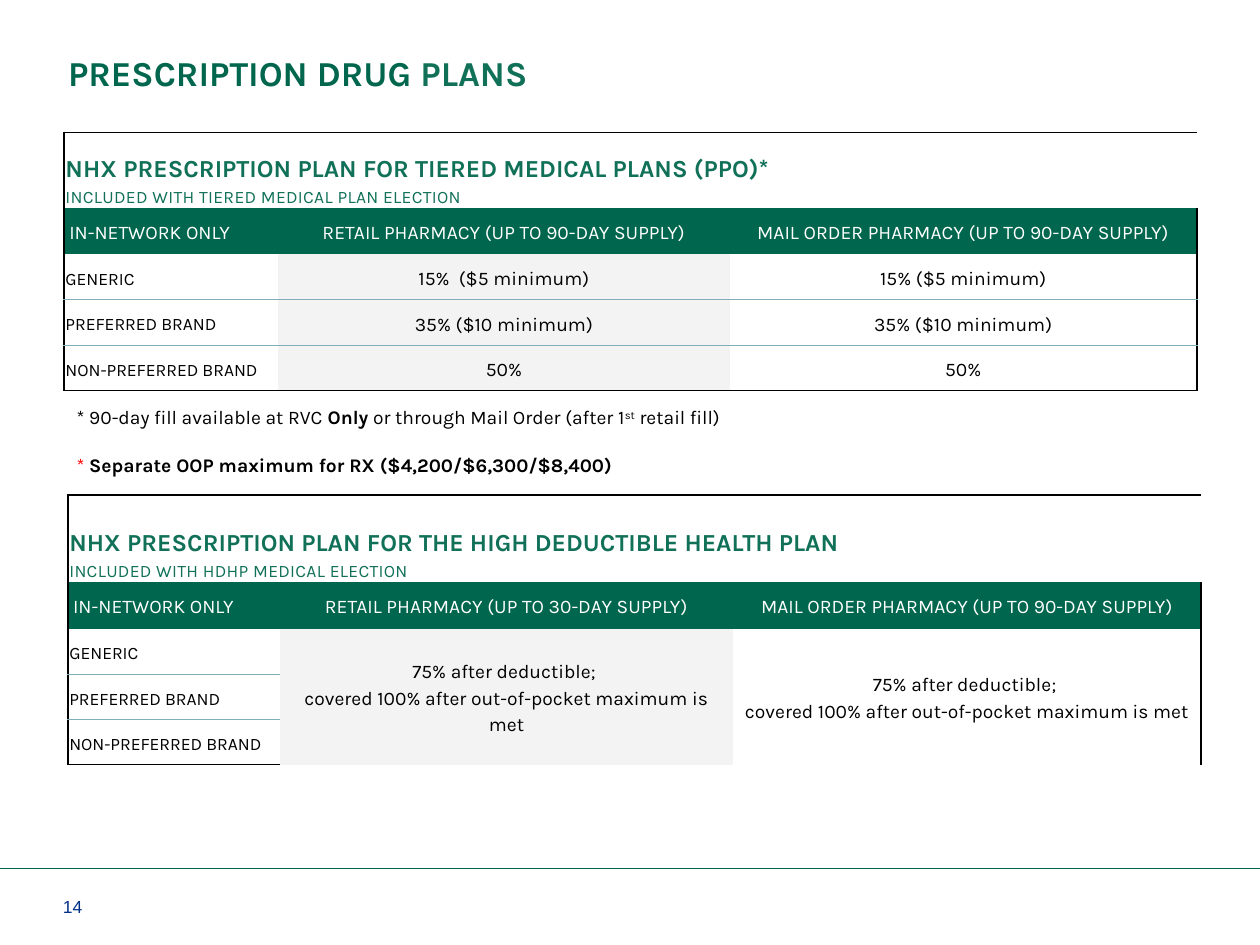
from lxml.etree import SubElement
from pptx import Presentation
from pptx.dml.color import RGBColor
from pptx.enum.shapes import MSO_CONNECTOR
from pptx.enum.text import MSO_ANCHOR as Anchor, PP_ALIGN as Align
from pptx.oxml.ns import qn
from pptx.util import Inches, Pt

# Content
TITLE = [("PRESCRIPTION DRUG ", "green"), ("PLANS", "leaf")]
TIERS = ["GENERIC", "PREFERRED BRAND", "NON-PREFERRED BRAND"]
AFTER_DEDUCTIBLE = "75% after deductible; \vcovered 100% after out-of-pocket maximum is met"
PLANS = [
    {
        "heading": "NHX PRESCRIPTION PLAN FOR TIERED MEDICAL PLANS (PPO)*",
        "included": "INCLUDED WITH TIERED MEDICAL PLAN ELECTION",
        "retail_days": 30 * 3,
        "costs": [("15%\u00a0 ($5 minimum)", "15% ($5 minimum)"),
                  ("35% ($10 minimum)", "35% ($10 minimum)"),
                  ("50%", "50%")],
        "left": 0.51, "top": 1.05, "columns": [1.7, 3.58, 3.71], "heading_height": 0.6,
    },
    {
        "heading": "NHX PRESCRIPTION PLAN FOR THE HIGH DEDUCTIBLE HEALTH PLAN",
        "included": "INCLUDED WITH HDHP MEDICAL ELECTION",
        "retail_days": 30,
        "costs": [(AFTER_DEDUCTIBLE, AFTER_DEDUCTIBLE)],  # one cost for all tiers
        "left": 0.54, "top": 3.93, "columns": [1.68, 3.6, 3.71], "heading_height": 0.69,
    },
]
# Each note is a list of (text, format)
NOTES = [
    [("* 90-day fill available at RVC ", {}), ("Only", {"bold": True}),
     (" or through Mail Order (after 1", {}), ("st", {"raised": True}),
     (" retail fill)", {})],
    [("* ", {"color": "red"}),
     ("Separate OOP maximum for RX ($4,200/$6,300/$8,400)", {"bold": True})],
]
PAGE = "14"

# Look
COLORS = {"green": "00664D", "leaf": "117158", "black": "000000", "white": "FFFFFF",
          "shade": "F3F3F3", "rule": "81AFB9", "red": "FF0000", "navy": "003087"}
HEADER_ROW, TIER_ROW = 0.37, 0.36
LABEL_INSETS = (0.01, 0.01, 0.01, 0)
VALUE_INSETS = (0.04, 0, 0.04, 0)
BOX_INSETS = (0, 0.05, 0, 0.05)
OUTLINE, RULE = ("black", 1), ("rule", 0.5)


def rgb(name):
    return RGBColor.from_string(COLORS[name])


def add_run(paragraph, text, size, color="black", bold=False, font="Karla",
            raised=False, tracking=0):
    run = paragraph.add_run()
    run.text = text
    for key, value in {"size": Pt(size), "bold": bold, "name": font}.items():
        setattr(run.font, key, value)
    run.font.color.rgb = rgb(color)
    if raised:
        run.font._element.set("baseline", "30000")
    if tracking:
        run.font._element.set("spc", str(tracking))


def add_text(paragraph, text, size, align=Align.LEFT, **style):
    paragraph.alignment = align
    paragraph.line_spacing = 1.19
    first, *rest = text.split("\v")
    add_run(paragraph, first, size, **style)
    for line in rest:
        paragraph.add_line_break()
        add_run(paragraph, line, size, **style)


def set_insets(holder, insets):
    for side, inset in zip(("left", "top", "right", "bottom"), insets):
        setattr(holder, f"margin_{side}", Inches(inset))


def set_borders(cell, borders):
    props = cell._tc.get_or_add_tcPr()
    for position, side in enumerate("LRTB"):
        color, width = borders.get(side, (None, 0))
        line = SubElement(props, qn(f"a:ln{side}"), w=str(Pt(width)))
        if color:
            fill = SubElement(line, qn("a:solidFill"))
            SubElement(fill, qn("a:srgbClr"), val=COLORS[color])
        else:
            SubElement(line, qn("a:noFill"))
        props.insert(position, line)


def cell_borders(row, column, last_row, merged_costs):
    borders = {}
    if column == 0:
        borders["L"] = OUTLINE
    if column == 2:
        borders["R"] = OUTLINE
    if row == 0:
        borders["T"] = OUTLINE
    if row == last_row:
        borders["B"] = OUTLINE
    if column == 0 or not merged_costs:
        if 2 <= row < last_row:
            borders["B"] = RULE
        if row > 2:
            borders["T"] = RULE
    return borders


def add_plan(slide, plan):
    columns = plan["columns"]
    heights = [plan["heading_height"], HEADER_ROW] + [TIER_ROW] * len(TIERS)
    last_row = len(heights) - 1
    merged_costs = len(plan["costs"]) == 1
    table = slide.shapes.add_table(
        len(heights), len(columns), Inches(plan["left"]), Inches(plan["top"]),
        Inches(sum(columns)), Inches(sum(heights))).table
    table.first_row = table.horz_banding = False
    for column, width in zip(table.columns, columns):
        column.width = Inches(width)
    for row, height in zip(table.rows, heights):
        row.height = Inches(height)

    # Fills, borders and insets by position
    for r in range(len(heights)):
        for c in range(len(columns)):
            cell = table.cell(r, c)
            fill = "green" if r == 1 else "shade" if r > 1 and c == 1 else None
            if fill:
                cell.fill.solid()
                cell.fill.fore_color.rgb = rgb(fill)
            else:
                cell.fill.background()
            set_borders(cell, cell_borders(r, c, last_row, merged_costs))
            set_insets(cell, LABEL_INSETS if r == 0 or (r > 1 and c == 0) else VALUE_INSETS)
            cell.vertical_anchor = Anchor.BOTTOM if r == 0 else Anchor.MIDDLE

    # Heading
    heading = table.cell(0, 0)
    heading.merge(table.cell(0, 2))
    add_text(heading.text_frame.paragraphs[0], plan["heading"], 14, color="leaf", bold=True)
    add_text(heading.text_frame.add_paragraph(), plan["included"], 10, color="leaf", tracking=20)

    # Column headers
    headers = ["IN-NETWORK ONLY",
               f"RETAIL PHARMACY (UP TO {plan['retail_days']}-DAY SUPPLY)",
               "MAIL ORDER PHARMACY (UP TO 90-DAY SUPPLY)"]
    for c, header in enumerate(headers):
        add_text(table.cell(1, c).text_frame.paragraphs[0], header, 11,
                 Align.CENTER if c else Align.LEFT, color="white")

    # Tiers and costs
    for r, tier in enumerate(TIERS, 2):
        add_text(table.cell(r, 0).text_frame.paragraphs[0], tier, 10)
    for r, costs in enumerate(plan["costs"], 2):
        for c, cost in enumerate(costs, 1):
            if merged_costs:
                table.cell(r, c).merge(table.cell(last_row, c))
            add_text(table.cell(r, c).text_frame.paragraphs[0], cost, 11, Align.CENTER)


def add_box(slide, left, top, width, height):
    frame = slide.shapes.add_textbox(*map(Inches, (left, top, width, height))).text_frame
    frame.word_wrap = True
    return frame


def main():
    deck = Presentation()
    deck.slide_width, deck.slide_height = Inches(10), Inches(7.5)
    slide = deck.slides.add_slide(deck.slide_layouts[5])

    # Title
    title = slide.shapes.title
    for key, value in {"left": 0.54, "top": 0.34, "width": 8.92, "height": 0.47}.items():
        setattr(title, key, Inches(value))
    set_insets(title.text_frame, BOX_INSETS)
    title.text_frame.vertical_anchor = Anchor.MIDDLE
    heading = title.text_frame.paragraphs[0]
    heading.alignment = Align.LEFT
    for text, color in TITLE:
        add_run(heading, text, 20, color, bold=True)

    # Plan tables
    for plan in PLANS:
        add_plan(slide, plan)

    # Notes between the tables
    notes = add_box(slide, 0.51, 3.17, 8.21, 0.66)
    for i, note in enumerate(NOTES):
        paragraph = notes.add_paragraph() if i else notes.paragraphs[0]
        if i:
            paragraph.space_before = Pt(14)
        for text, style in note:
            add_run(paragraph, text, 11, **style)

    # Footer
    rule = slide.shapes.add_connector(
        MSO_CONNECTOR.STRAIGHT, 0, Inches(6.89), deck.slide_width, Inches(6.89))
    rule.line.color.rgb = rgb("green")
    rule.line.width = Pt(0.5)
    SubElement(rule._element.spPr, qn("a:effectLst"))
    page = add_box(slide, 0.5, 7.08, 0.54, 0.25)
    set_insets(page, BOX_INSETS)
    page.vertical_anchor = Anchor.BOTTOM
    add_run(page.paragraphs[0], PAGE, 10, "navy", font="Arial")

    deck.save("out.pptx")


if __name__ == "__main__":
    main()
